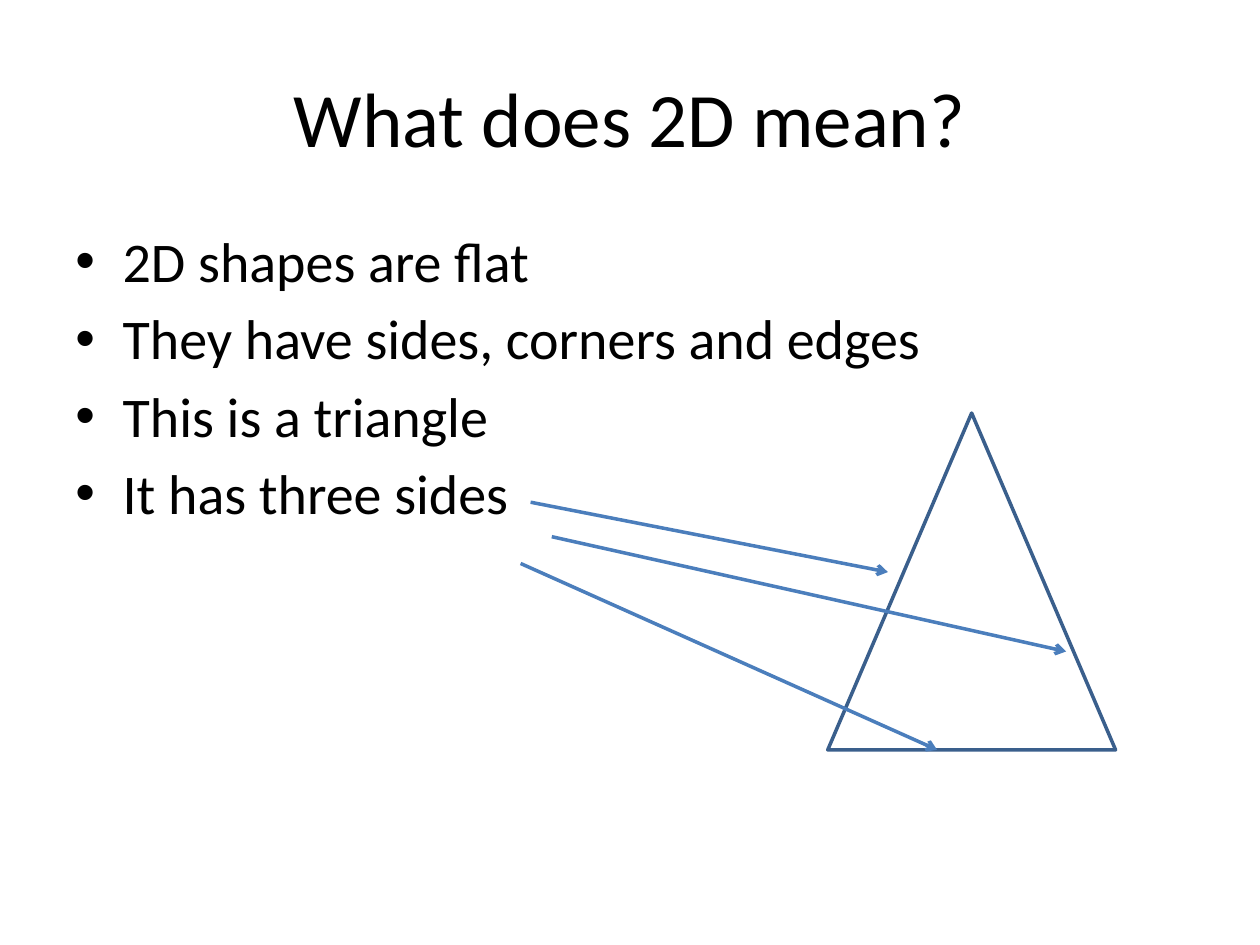
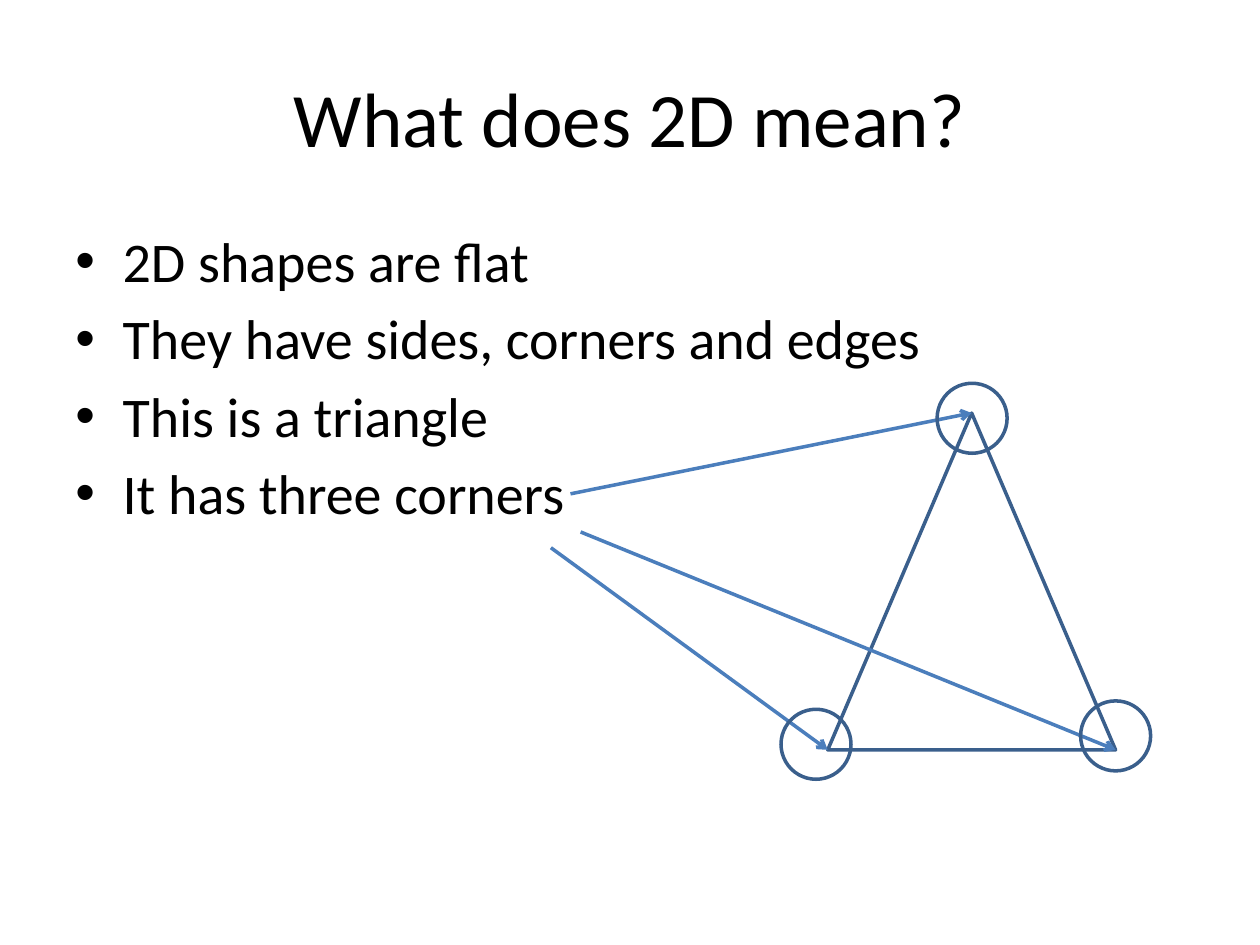
from dataclasses import dataclass

import pptx
import pptx.dml.color
import pptx.enum.shapes
import pptx.enum.text
import pptx.oxml
import pptx.oxml.ns
import pptx.presentation
import pptx.shapes.autoshape
import pptx.slide
import pptx.text.text
import pptx.util
from lxml import etree

BLACK = pptx.dml.color.RGBColor(0x00, 0x00, 0x00)
WHITE = pptx.dml.color.RGBColor(0xFF, 0xFF, 0xFF)
OUTLINE_BLUE = pptx.dml.color.RGBColor(0x3A, 0x5F, 0x8C)
ARROW_BLUE = pptx.dml.color.RGBColor(0x4B, 0x7E, 0xBC)

FONT = "Calibri"
LINE_WIDTH = 2
BULLET_INDENT = 27
BULLET_SPACING = 5.75
CIRCLE_SIZE = 40
TITLE = "What does 2D mean?"
SHARED_BULLETS = (
    "2D shapes are flat",
    "They have sides, corners and edges",
    "This is a triangle",
)


@dataclass(frozen=True)
class Box:
    left: float
    top: float
    width: float
    height: float

    def lengths(self) -> list[pptx.util.Length]:
        return [pptx.util.Pt(value) for value in (self.left, self.top, self.width, self.height)]


@dataclass(frozen=True)
class Point:
    x: float
    y: float


@dataclass(frozen=True)
class Arrow:
    start: Point
    end: Point


@dataclass(frozen=True)
class Lesson:
    last_bullet: str
    arrows: tuple[Arrow, ...]
    circle_centres: tuple[Point, ...] = ()


TITLE_BOX = Box(36, 21.6, 648, 90)
BODY_BOX = Box(36, 126, 648, 356.4)
TRIANGLE_BOX = Box(473, 236, 164.5, 192.5)
BASE_Y = TRIANGLE_BOX.top + TRIANGLE_BOX.height
APEX = Point(TRIANGLE_BOX.left + TRIANGLE_BOX.width / 2, TRIANGLE_BOX.top)
LEFT_CORNER = Point(TRIANGLE_BOX.left, BASE_Y)
RIGHT_CORNER = Point(TRIANGLE_BOX.left + TRIANGLE_BOX.width, BASE_Y)

LESSONS = (
    Lesson(
        "It has three sides",
        (
            Arrow(Point(303.2, 287), Point(507.4, 326.9)),
            Arrow(Point(297.5, 322), Point(535.5, BASE_Y)),
            Arrow(Point(315.3, 306.7), Point(609.2, 372.3)),
        ),
    ),
    Lesson(
        "It has three corners",
        (
            Arrow(Point(326, 282.2), APEX),
            Arrow(Point(314.8, 313), LEFT_CORNER),
            Arrow(Point(331.8, 304), RIGHT_CORNER),
        ),
        (Point(555.5, 239), Point(637.5, 420.5), Point(466.3, 425.3)),
    ),
)


def add_text_frame(slide: pptx.slide.Slide, box: Box) -> pptx.text.text.TextFrame:
    text_frame = slide.shapes.add_textbox(*box.lengths()).text_frame
    text_frame.word_wrap = True
    return text_frame


def add_run(paragraph: pptx.text.text._Paragraph, text: str, size: float) -> None:
    run = paragraph.add_run()
    run.text = text
    run.font.name = FONT
    run.font.size = pptx.util.Pt(size)
    run.font.color.rgb = BLACK


def add_title(slide: pptx.slide.Slide) -> None:
    text_frame = add_text_frame(slide, TITLE_BOX)
    text_frame.vertical_anchor = pptx.enum.text.MSO_ANCHOR.MIDDLE
    paragraph = text_frame.paragraphs[0]
    paragraph.alignment = pptx.enum.text.PP_ALIGN.CENTER
    add_run(paragraph, TITLE, 44)


def set_bullet(paragraph: pptx.text.text._Paragraph) -> None:
    paragraph.space_before = pptx.util.Pt(BULLET_SPACING)
    properties = paragraph._p.get_or_add_pPr()
    properties.set("marL", str(pptx.util.Pt(BULLET_INDENT)))
    properties.set("indent", str(-pptx.util.Pt(BULLET_INDENT)))
    font = etree.SubElement(properties, pptx.oxml.ns.qn("a:buFont"))
    font.set("typeface", "Arial")
    bullet = etree.SubElement(properties, pptx.oxml.ns.qn("a:buChar"))
    bullet.set("char", "•")


def add_bullets(slide: pptx.slide.Slide, last_bullet: str) -> None:
    text_frame = add_text_frame(slide, BODY_BOX)
    for index, text in enumerate((*SHARED_BULLETS, last_bullet)):
        paragraph = text_frame.add_paragraph() if index else text_frame.paragraphs[0]
        set_bullet(paragraph)
        add_run(paragraph, text, 32)


def add_outline(
    slide: pptx.slide.Slide, kind: pptx.enum.shapes.MSO_SHAPE, box: Box
) -> None:
    shape = slide.shapes.add_shape(kind, *box.lengths())
    shape.shadow.inherit = False
    shape.fill.background()
    shape.line.color.rgb = OUTLINE_BLUE
    shape.line.width = pptx.util.Pt(LINE_WIDTH)


def add_circle(slide: pptx.slide.Slide, centre: Point) -> None:
    radius = CIRCLE_SIZE / 2
    box = Box(centre.x - radius, centre.y - radius, CIRCLE_SIZE, CIRCLE_SIZE)
    add_outline(slide, pptx.enum.shapes.MSO_SHAPE.OVAL, box)


def add_arrow(slide: pptx.slide.Slide, arrow: Arrow) -> None:
    ends = (arrow.start.x, arrow.start.y, arrow.end.x, arrow.end.y)
    connector = slide.shapes.add_connector(
        pptx.enum.shapes.MSO_CONNECTOR.STRAIGHT, *map(pptx.util.Pt, ends)
    )
    connector.line.color.rgb = ARROW_BLUE
    connector.line.width = pptx.util.Pt(LINE_WIDTH)
    head = etree.SubElement(connector.line._get_or_add_ln(), pptx.oxml.ns.qn("a:tailEnd"))
    head.set("type", "arrow")
    etree.SubElement(connector._element.spPr, pptx.oxml.ns.qn("a:effectLst"))


def add_lesson(presentation: pptx.presentation.Presentation, lesson: Lesson) -> None:
    slide = presentation.slides.add_slide(presentation.slide_layouts[6])
    slide.background.fill.solid()
    slide.background.fill.fore_color.rgb = WHITE
    add_title(slide)
    add_bullets(slide, lesson.last_bullet)
    add_outline(slide, pptx.enum.shapes.MSO_SHAPE.ISOSCELES_TRIANGLE, TRIANGLE_BOX)
    for arrow in lesson.arrows:
        add_arrow(slide, arrow)
    for centre in lesson.circle_centres:
        add_circle(slide, centre)


def main() -> None:
    presentation = pptx.Presentation()
    presentation.slide_width = pptx.util.Pt(720)
    presentation.slide_height = pptx.util.Pt(540)
    for lesson in LESSONS:
        add_lesson(presentation, lesson)
    presentation.save("out.pptx")


if __name__ == "__main__":
    main()
